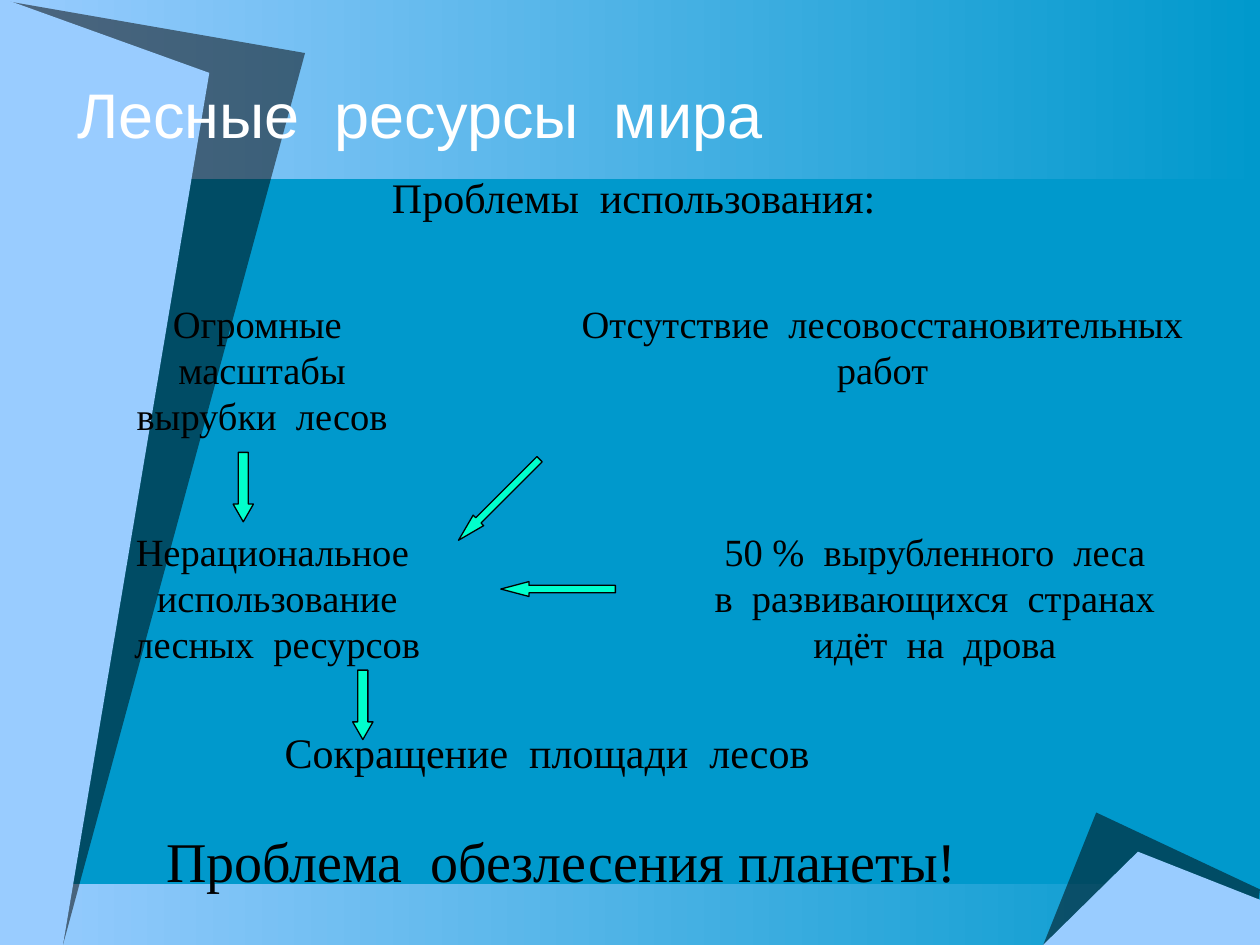
from dataclasses import dataclass

import lxml.etree
import pptx
import pptx.dml.color
import pptx.enum.shapes
import pptx.enum.text
import pptx.oxml.ns
import pptx.util

Cm = pptx.util.Cm
Pt = pptx.util.Pt
ALIGN = pptx.enum.text.PP_ALIGN
SERIF = "Times New Roman"
SKY, SEA, BLACK, WHITE, MINT = "99CCFF", "0099CC", "000000", "FFFFFF", "00FFCC"
WIDTH, HEIGHT = 25.4, 19.05


@dataclass
class Band:
    top: float
    height: float


@dataclass
class Blade:
    points: list[tuple[float, float]]
    color: str
    opacity: int = 100


@dataclass
class Caption:
    lines: list[str]
    left: float
    top: float
    width: float
    height: float
    size: int = 22
    align: ALIGN = ALIGN.CENTER
    wrap: bool = True


@dataclass
class Arrow:
    left: float
    top: float
    width: float
    length: float
    head: float
    rotation: int = 0


BOTTOM_BAND = Band(17.83, 1.22)
TOP_BAND = Band(0, 3.61)
CORNER_BLADES = [
    Blade([(22.1, 16.38), (WIDTH, 17.93), (25.25, HEIGHT), (21.03, HEIGHT)], BLACK, 50),
    Blade([(21.03, HEIGHT), (22.94, 17.17), (WIDTH, 18.14), (WIDTH, HEIGHT)], SKY),
]
LEFT_BLADES = [
    Blade([(0, 0), (6.15, 1.07), (1.27, HEIGHT), (0, HEIGHT)], BLACK, 50),
    Blade([(0, -0.05), (4.22, 1.47), (1.27, HEIGHT), (0, HEIGHT)], SKY),
]
CAPTIONS = [
    Caption(["Сокращение  площади  лесов"], 5.49, 14.53, 11.2, 1.27, 24, ALIGN.LEFT, False),
    Caption(["Нерациональное  использование", "лесных  ресурсов"], 0.69, 10.52, 9.8, 3.07),
    Caption(["50 %  вырубленного  леса", "в  развивающихся  странах", "идёт  на  дрова"],
            12.29, 10.52, 13.11, 3.07),
    Caption(["Проблема  обезлесения планеты!"], 3.1, 16.54, 16.61, 1.63, 32, ALIGN.LEFT, False),
    Caption(["Огромные  масштабы", "вырубки  лесов"], 1.5, 5.92, 7.57, 3.07),
    Caption(["Отсутствие  лесовосстановительных", "работ"], 11.4, 5.92, 12.78, 2.13, wrap=False),
]
ARROWS = [
    Arrow(4.7, 9.12, 0.41, 1.4, 0.87),
    Arrow(7.11, 13.51, 0.41, 1.4, 0.87),
    Arrow(9.91, 8.92, 0.3, 2.31, 1.89, 45),
    Arrow(11.1, 10.72, 0.3, 2.31, 1.89, 90),
]


def rgb(color: str):
    return pptx.dml.color.RGBColor.from_string(color)


def fill_solid(shape, color: str) -> None:
    shape.fill.solid()
    shape.fill.fore_color.rgb = rgb(color)
    shape.shadow.inherit = False


def draw_band(slide, band: Band) -> None:
    shape = slide.shapes.add_shape(pptx.enum.shapes.MSO_SHAPE.RECTANGLE,
                                   0, Cm(band.top), Cm(WIDTH), Cm(band.height))
    shape.shadow.inherit = False
    shape.line.fill.background()
    shape.fill.gradient()
    shape.fill.gradient_angle = 0
    for stop, color in zip(shape.fill.gradient_stops, (SKY, SEA)):
        stop.color.rgb = rgb(color)


def draw_blade(slide, blade: Blade) -> None:
    start, *rest = [(Cm(x), Cm(y)) for x, y in blade.points]
    builder = slide.shapes.build_freeform(*start)
    builder.add_line_segments(rest, close=True)
    shape = builder.convert_to_shape()
    fill_solid(shape, blade.color)
    shape.line.fill.background()
    if blade.opacity < 100:
        qn = pptx.oxml.ns.qn
        color = shape.element.spPr.find(qn("a:solidFill")).find(qn("a:srgbClr"))
        lxml.etree.SubElement(color, qn("a:alpha"), val=str(blade.opacity * 1000))


def format_paragraph(paragraph, font: str, size: int, color: str, align: ALIGN) -> None:
    paragraph.alignment = align
    paragraph.font.name = font
    paragraph.font.size = Pt(size)
    paragraph.font.color.rgb = rgb(color)


def draw_caption(slide, caption: Caption) -> None:
    box = slide.shapes.add_textbox(Cm(caption.left), Cm(caption.top),
                                   Cm(caption.width), Cm(caption.height))
    frame = box.text_frame
    frame.word_wrap = caption.wrap
    frame.auto_size = pptx.enum.text.MSO_AUTO_SIZE.SHAPE_TO_FIT_TEXT
    frame.text = "\n".join(caption.lines)
    for paragraph in frame.paragraphs:
        format_paragraph(paragraph, SERIF, caption.size, BLACK, caption.align)


def draw_arrow(slide, arrow: Arrow) -> None:
    shape = slide.shapes.add_shape(pptx.enum.shapes.MSO_SHAPE.DOWN_ARROW,
                                   Cm(arrow.left), Cm(arrow.top),
                                   Cm(arrow.width), Cm(arrow.length))
    shape.adjustments[0] = 0.5
    shape.adjustments[1] = arrow.head
    shape.rotation = arrow.rotation
    fill_solid(shape, MINT)
    shape.line.color.rgb = rgb(BLACK)
    shape.line.width = Pt(0.75)


def place_placeholder(shape, text: str, left: float, top: float, width: float, height: float):
    """Move a placeholder in front of everything drawn so far and return its paragraph."""
    shape.element.getparent().append(shape.element)
    shape.left, shape.top, shape.width, shape.height = map(Cm, (left, top, width, height))
    shape.text_frame.text = text
    shape.text_frame.auto_size = pptx.enum.text.MSO_AUTO_SIZE.NONE
    return shape.text_frame.paragraphs[0]


def main() -> None:
    presentation = pptx.Presentation()
    presentation.slide_width, presentation.slide_height = Cm(WIDTH), Cm(HEIGHT)
    slide = presentation.slides.add_slide(presentation.slide_layouts[1])
    slide.background.fill.solid()
    slide.background.fill.fore_color.rgb = rgb(SEA)
    title, body = slide.placeholders

    for band, blades in ((BOTTOM_BAND, CORNER_BLADES), (TOP_BAND, LEFT_BLADES)):
        draw_band(slide, band)
        for blade in blades:
            draw_blade(slide, blade)

    heading = place_placeholder(title, "Лесные  ресурсы  мира", 1.3, 0, 22.86, 3.18)
    title.text_frame.vertical_anchor = pptx.enum.text.MSO_ANCHOR.BOTTOM
    format_paragraph(heading, "Arial", 36, WHITE, ALIGN.LEFT)

    for caption in CAPTIONS:
        draw_caption(slide, caption)

    subtitle = place_placeholder(body, "Проблемы  использования:", 2.49, 3.33, 20.57, 1.88)
    format_paragraph(subtitle, SERIF, 24, BLACK, ALIGN.CENTER)
    properties = subtitle._p.get_or_add_pPr()
    properties.set("marL", str(Cm(0.95)))
    properties.set("indent", str(Cm(-0.95)))
    properties.insert_element_before(
        pptx.oxml.parse_xml(f"<a:buNone {pptx.oxml.ns.nsdecls('a')}/>"), "a:tabLst", "a:defRPr")

    for arrow in ARROWS:
        draw_arrow(slide, arrow)

    presentation.save("out.pptx")


if __name__ == "__main__":
    main()
